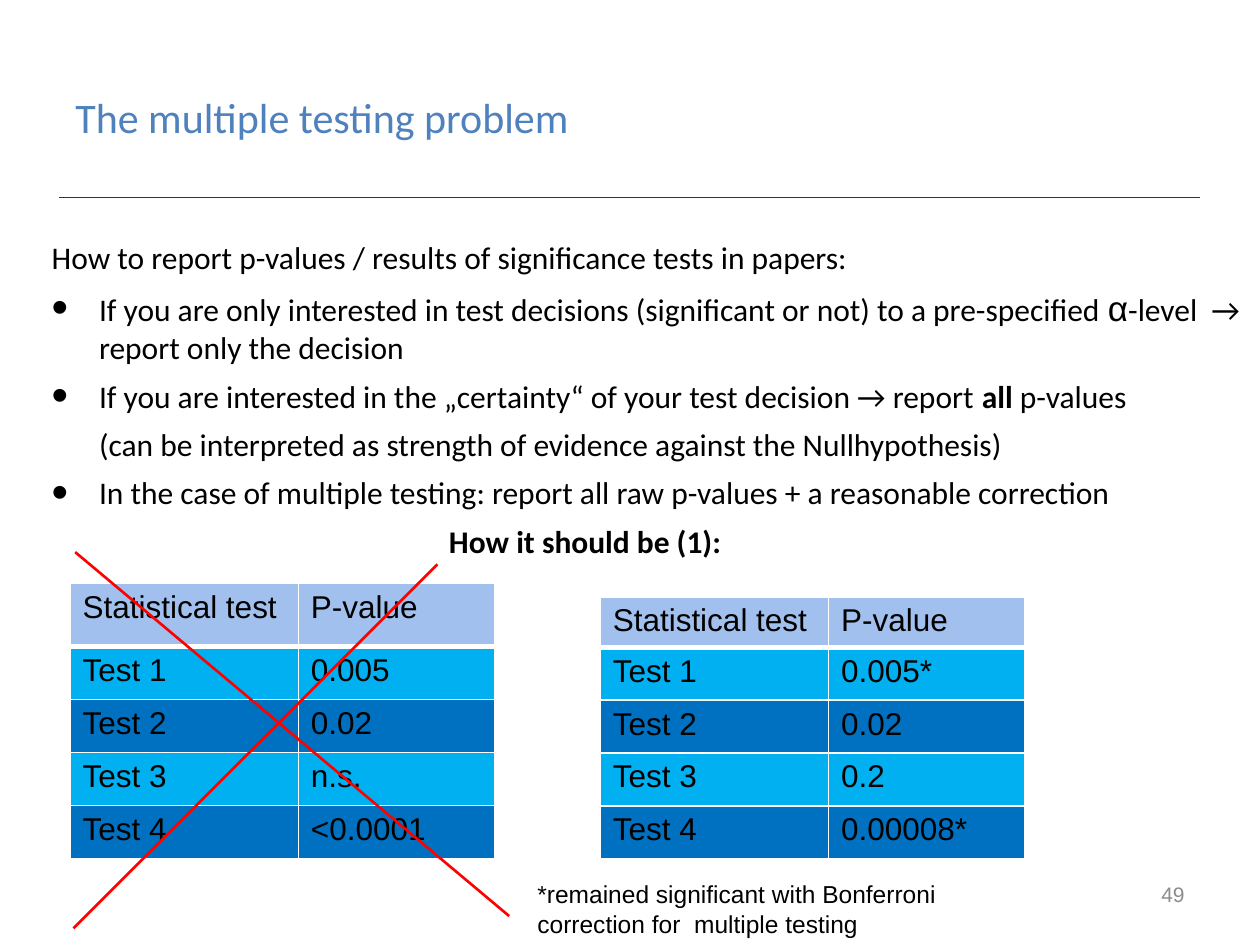
import pptx
import pptx.dml.color
import pptx.enum.shapes
import pptx.enum.text
import pptx.oxml
import pptx.oxml.ns
import pptx.util

Pt = pptx.util.Pt
ALIGN = pptx.enum.text.PP_ALIGN
ANCHOR = pptx.enum.text.MSO_ANCHOR

COLORS = {
    "title": "4F81BD", "text": "000000", "page": "8C8C8C",
    "rule": "AC0000", "cross": "FF0000", "border": "FFFFFF",
    "head": "A1C0EE", "light": "00B0F0", "dark": "0070C0",
}

BODY = {"name": "Calibri", "size": Pt(18), "color": "text"}
BOLD = {**BODY, "bold": True}
GREEK = {"name": "Arial", "size": Pt(20), "color": "text"}
CELL = {"name": "Arial", "size": Pt(18), "color": "text"}
TITLE = {"name": "Calibri", "size": Pt(24), "color": "title"}
PAGE = {"name": "Arial", "size": Pt(12), "color": "page"}
NOTE = {"name": "Arial", "size": Pt(14), "color": "text"}

HANG = 27
# Each entry: left margin, bullet or not, runs
POINTS = [
    (0, False, [("How to report p-values / results of significance tests in papers:", BODY)]),
    (HANG, True, [
        ("If you are only interested in test decisions (significant or not) to a pre-specified ", BODY),
        ("α", GREEK),
        ("-level  → report only the decision", BODY)]),
    (HANG, True, [
        ("If you are interested in the „certainty“ of your test decision → report ", BODY),
        ("all", BOLD),
        (" p-values", BODY)]),
    (HANG, False, [("(can be interpreted as strength of evidence against the Nullhypothesis)", BODY)]),
    (HANG, True, [
        ("In the case of multiple testing: report all raw p-values + a reasonable correction", BODY)]),
    (227, False, [("How it should be (1):", BOLD)]),
]

TESTS = ["Test 1", "Test 2", "Test 3", "Test 4"]
WRONG = ["0.005", "0.02", "n.s.", "<0.0001"]
RIGHT = ["0.005*", "0.02", "0.2", "0.00008*"]


def rgb(key):
    return pptx.dml.color.RGBColor.from_string(COLORS[key])


def add_run(para, text, style):
    run = para.add_run()
    run.text = text
    for key, value in style.items():
        if key == "color":
            run.font.color.rgb = rgb(value)
        else:
            setattr(run.font, key, value)


def add_box(slide, left, top, width, height, anchor=ANCHOR.TOP):
    """Add a wrapping text box and return its text frame."""
    box = slide.shapes.add_textbox(Pt(left), Pt(top), Pt(width), Pt(height))
    frame = box.text_frame
    frame.word_wrap = True
    frame.vertical_anchor = anchor
    return frame


def add_label(slide, text, style, *area, anchor=ANCHOR.TOP, align=ALIGN.LEFT):
    para = add_box(slide, *area, anchor=anchor).paragraphs[0]
    para.alignment = align
    add_run(para, text, style)


def indent(para, left, bullet):
    props = para._p.get_or_add_pPr()
    props.set("marL", str(Pt(left)))
    props.set("indent", str(Pt(-HANG) if bullet else 0))
    if bullet:
        space = pptx.oxml.ns.nsdecls("a")
        for tag in ('buSzPct {} val="150000"', 'buFont {} typeface="Arial"', 'buChar {} char="•"'):
            props.append(pptx.oxml.parse_xml(f"<a:{tag.format(space)}/>"))


def add_points(slide, points, *area):
    frame = add_box(slide, *area)
    for i, (left, bullet, runs) in enumerate(points):
        para = frame.add_paragraph() if i else frame.paragraphs[0]
        if i:
            para.space_before = Pt(6)
        indent(para, left, bullet)
        for text, style in runs:
            add_run(para, text, style)


def add_line(slide, start, end, color, width):
    line = slide.shapes.add_connector(
        pptx.enum.shapes.MSO_CONNECTOR.STRAIGHT, *map(Pt, start + end))
    line.line.color.rgb = rgb(color)
    line.line.width = Pt(width)
    line._element.spPr.append(
        pptx.oxml.parse_xml(f"<a:effectLst {pptx.oxml.ns.nsdecls('a')}/>"))


def add_edges(cell, widths):
    """Draw the cell borders; widths maps L, R, T and B to points."""
    props = cell._tc.get_or_add_tcPr()
    for side, width in widths.items():
        props.append(pptx.oxml.parse_xml(
            f'<a:ln{side} {pptx.oxml.ns.nsdecls("a")} w="{Pt(width)}"><a:solidFill>'
            f'<a:srgbClr val="{COLORS["border"]}"/></a:solidFill></a:ln{side}>'))


def add_grid(slide, left, top, head, values):
    """Add a table of tests and p-values; head is the header height."""
    rows = [("Statistical test", "P-value"), *zip(TESTS, values)]
    cols, step = (130.5, 112), 30.25
    table = slide.shapes.add_table(
        len(rows), len(cols), Pt(left), Pt(top),
        Pt(sum(cols)), Pt(head + step * len(values))).table
    table.first_row = table.horz_banding = False
    for col, width in zip(table.columns, cols):
        col.width = Pt(width)
    for i, row in enumerate(rows):
        table.rows[i].height = Pt(step if i else head)
        fill = ("dark" if i % 2 == 0 else "light") if i else "head"
        edges = {"L": 1, "R": 1, "T": 3 if i == 1 else 1, "B": 1 if i else 3}
        for j, text in enumerate(row):
            cell = table.cell(i, j)
            add_edges(cell, edges)
            cell.fill.solid()
            cell.fill.fore_color.rgb = rgb(fill)
            add_run(cell.text_frame.paragraphs[0], text, CELL)


def main():
    deck = pptx.Presentation()
    deck.slide_width, deck.slide_height = Pt(720), Pt(540)
    slide = deck.slides.add_slide(deck.slide_layouts[6])

    add_line(slide, (34, 112.5), (686, 112.5), "rule", 0.25)
    add_label(slide, "49", PAGE, 516, 492, 168, 37.5, anchor=ANCHOR.MIDDLE, align=ALIGN.RIGHT)
    add_label(slide, "The multiple testing problem", TITLE, 36, 21.5, 487.5, 90,
              anchor=ANCHOR.MIDDLE)
    add_points(slide, POINTS, 22.5, 132.5, 697.5, 407.5)
    add_grid(slide, 40, 333.5, 36, WRONG)
    add_grid(slide, 343, 341, 28.5, RIGHT)
    add_line(slide, (250, 322.5), (42, 530.5), "cross", 1.5)
    add_line(slide, (43, 315.5), (291, 523.5), "cross", 1.5)
    add_label(slide, "*remained significant with Bonferroni correction for  multiple testing",
              NOTE, 300, 499, 280, 41)
    deck.save("out.pptx")


if __name__ == "__main__":
    main()
